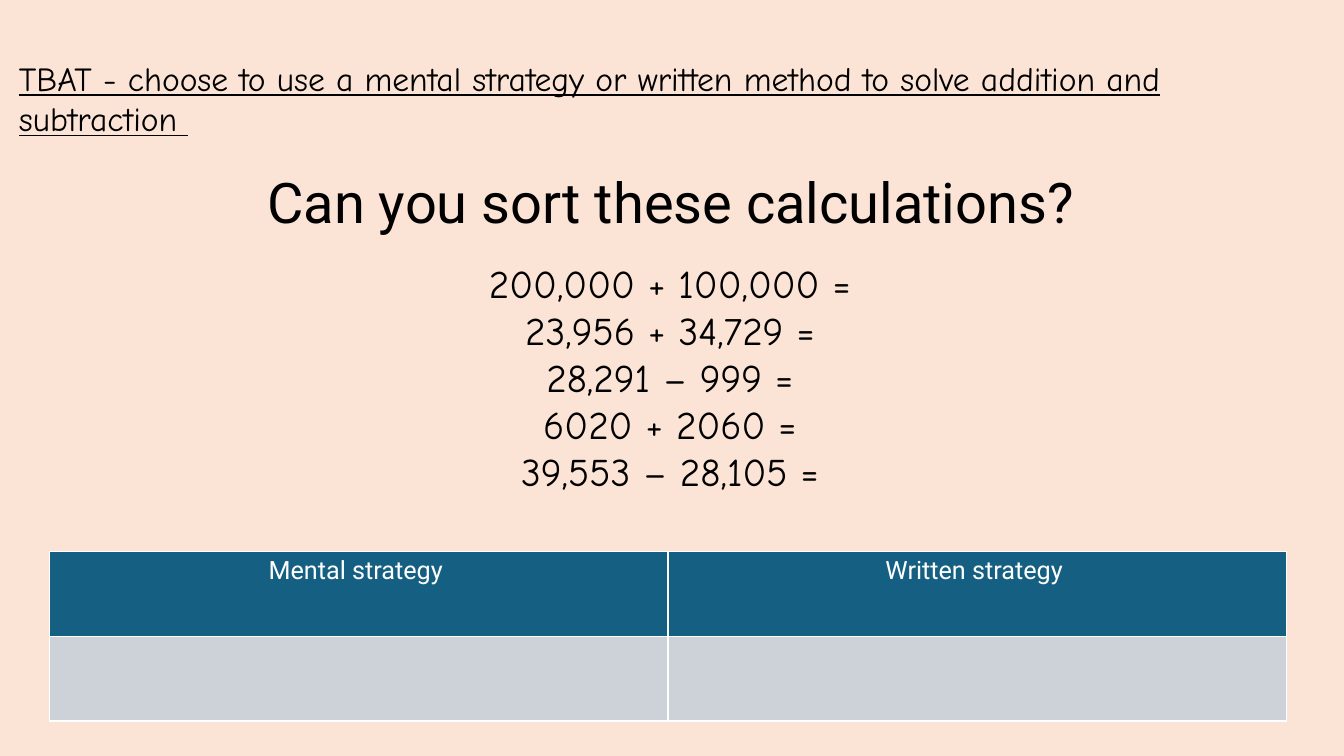
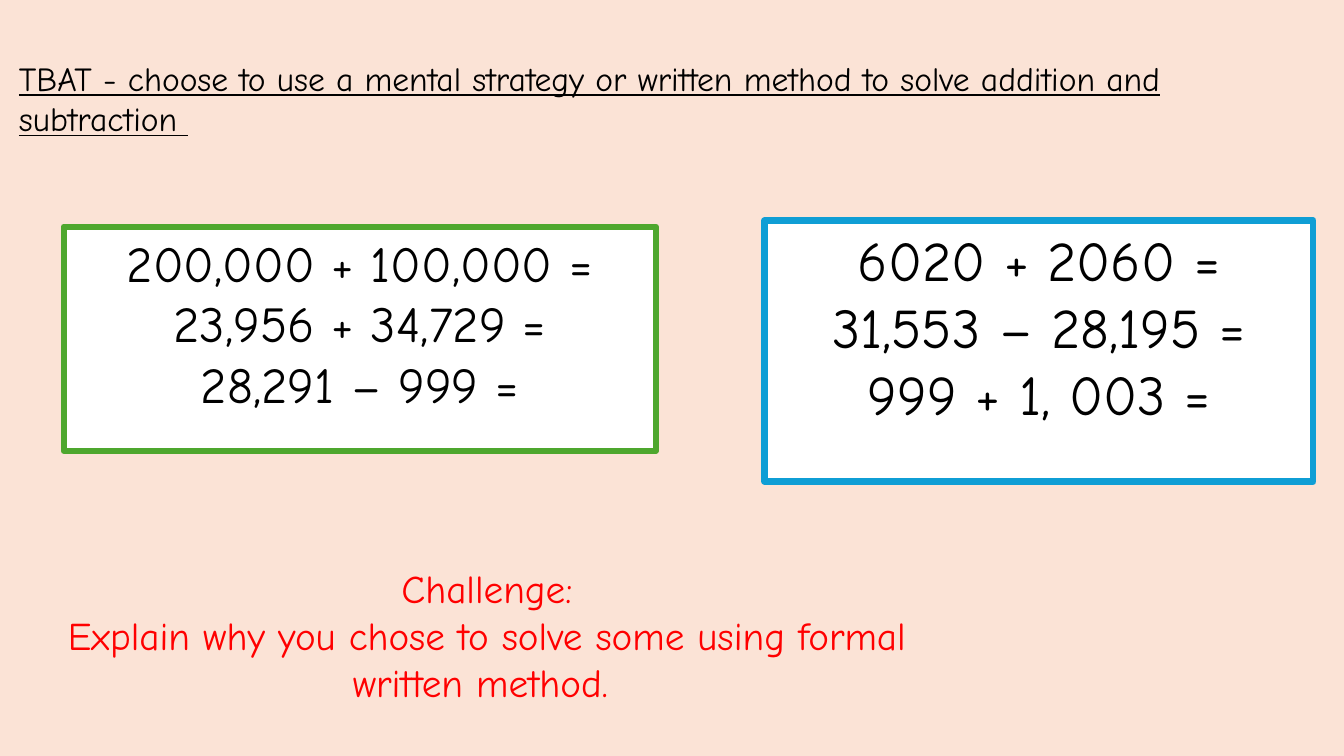
from lxml import etree
from pptx import Presentation
from pptx.dml.color import RGBColor
from pptx.enum import shapes, text
from pptx.oxml import ns
from pptx.util import Pt

PEACH = RGBColor(0xFB, 0xE3, 0xD6)
BLACK = RGBColor(0x00, 0x00, 0x00)
WHITE = RGBColor(0xFF, 0xFF, 0xFF)
RED = RGBColor(0xFF, 0x00, 0x00)
GREEN = RGBColor(0x4E, 0xA7, 0x2E)
BLUE = RGBColor(0x0F, 0x9E, 0xD5)
TEAL = RGBColor(0x15, 0x60, 0x82)
GREY = RGBColor(0xCC, 0xD2, 0xD8)

HANDWRITING = "Comic Neue"
SANS = "Roboto"
OBJECTIVE = ("TBAT - choose to use a mental strategy or written method "
             "to solve addition and subtraction ")
SHARED_SUMS = ["200,000 + 100,000 =", "23,956 + 34,729 =", "28,291 – 999 ="]


def write_lines(text_frame, lines, size, font=HANDWRITING, color=BLACK,
                align=text.PP_ALIGN.CENTER, underline=False):
    text_frame.text = "\n".join(lines)
    text_frame.word_wrap = True
    for paragraph in text_frame.paragraphs:
        paragraph.alignment = align
        for run in paragraph.runs:
            run.font.size = Pt(size)
            run.font.name = font
            run.font.color.rgb = color
            run.font.underline = underline


def add_text(slide, box, lines, size, **style):
    shape = slide.shapes.add_textbox(*map(Pt, box))
    write_lines(shape.text_frame, lines, size, **style)


def add_sum_card(slide, box, lines, size, line_color):
    shape = slide.shapes.add_shape(shapes.MSO_SHAPE.RECTANGLE, *map(Pt, box))
    shape.shadow.inherit = False
    shape.fill.solid()
    shape.fill.fore_color.rgb = WHITE
    shape.line.color.rgb = line_color
    shape.line.width = Pt(4.5)
    shape.text_frame.vertical_anchor = text.MSO_ANCHOR.TOP
    write_lines(shape.text_frame, lines, size)


def style_cell(cell, fill_color):
    properties = cell._tc.get_or_add_tcPr()
    for side in ("a:lnL", "a:lnR", "a:lnT", "a:lnB"):
        border = etree.SubElement(properties, ns.qn(side), w=str(Pt(1)))
        fill = etree.SubElement(border, ns.qn("a:solidFill"))
        etree.SubElement(fill, ns.qn("a:srgbClr"), val=str(WHITE))
    cell.fill.solid()
    cell.fill.fore_color.rgb = fill_color


def add_sorting_table(slide, box, headings):
    table = slide.shapes.add_table(2, len(headings), *map(Pt, box)).table
    for column, heading in enumerate(headings):
        write_lines(table.cell(0, column).text_frame, [heading], 18,
                    font=SANS, color=WHITE)
        for row, fill_color in enumerate((TEAL, GREY)):
            style_cell(table.cell(row, column), fill_color)


def add_lesson_slide(presentation):
    slide = presentation.slides.add_slide(presentation.slide_layouts[6])
    slide.background.fill.solid()
    slide.background.fill.fore_color.rgb = PEACH
    add_text(slide, (6.5, 37.5, 944, 65), [OBJECTIVE], 24,
             align=text.PP_ALIGN.LEFT, underline=True)
    return slide


def add_sorting_slide(presentation):
    slide = add_lesson_slide(presentation)
    add_text(slide, (13.5, 116, 931, 55.5),
             ["Can you sort these calculations?"], 40, font=SANS)
    add_sorting_table(slide, (35.5, 394, 883.5, 121),
                      ["Mental strategy ", "Written strategy "])
    add_text(slide, (299.5, 181.5, 358, 177),
             SHARED_SUMS + ["6020 + 2060 =", "39,553 – 28,105 ="], 28)


def add_practice_slide(presentation):
    slide = add_lesson_slide(presentation)
    add_text(slide, (37.5, 399.5, 620.5, 143),
             ["Challenge:",
              "Explain why you chose to solve some using formal written method. "],
             28, color=RED)
    add_sum_card(slide, (45.5, 162, 423, 160), SHARED_SUMS, 36, GREEN)
    add_sum_card(slide, (546, 157.5, 392, 186.5),
                 ["6020 + 2060 =", "31,553 – 28,195 =", "999 + 1, 003 ="],
                 40, BLUE)


def main():
    presentation = Presentation()
    presentation.slide_width = Pt(960)
    presentation.slide_height = Pt(540)
    add_sorting_slide(presentation)
    add_practice_slide(presentation)
    presentation.save("out.pptx")


if __name__ == "__main__":
    main()
